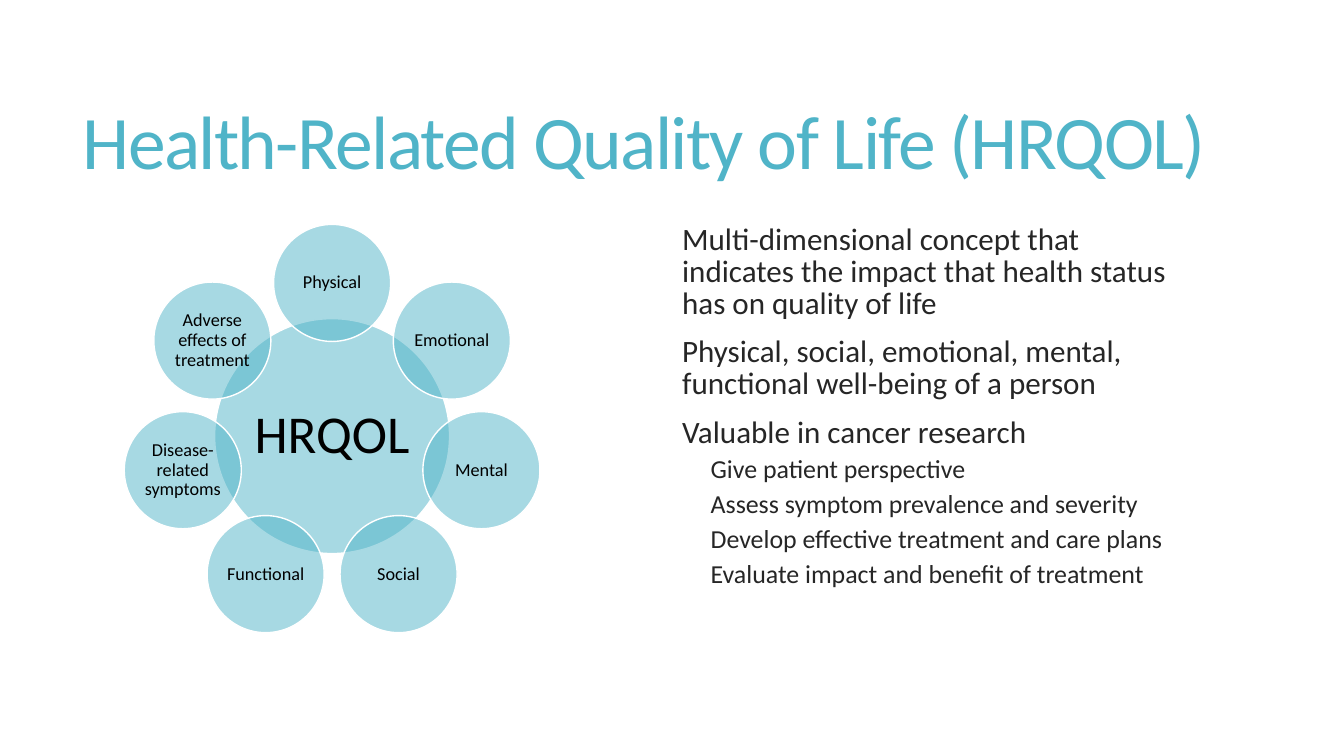
from math import cos, pi, sin

from lxml.etree import SubElement
from pptx import Presentation
from pptx.dml.color import RGBColor
from pptx.enum.shapes import MSO_SHAPE
from pptx.enum.text import MSO_ANCHOR, MSO_AUTO_SIZE, PP_ALIGN
from pptx.oxml.ns import qn
from pptx.util import Cm, Pt

COLOURS = {"teal": "50B4C8", "white": "FFFFFF", "black": "000000", "body": "262626"}
CENTRE_X, CENTRE_Y = 8.37, 10.99
RING_RADIUS = 3.86
HUB_SIZE, PETAL_SIZE = 5.92, 2.95


def format_paragraph(paragraph, size, colour, line_spacing):
    paragraph.line_spacing = line_spacing
    for run in paragraph.runs:
        run.font.name = "Calibri"
        run.font.size = Pt(size)
        run.font.color.rgb = RGBColor.from_string(COLOURS[colour])


def add_circle(shapes, label, x, y, diameter, size, inset):
    """Add a half-transparent labelled circle centred on x, y (cm)."""
    circle = shapes.add_shape(
        MSO_SHAPE.OVAL, Cm(x - diameter / 2), Cm(y - diameter / 2), Cm(diameter), Cm(diameter)
    )
    circle.shadow.inherit = False
    circle.fill.solid()
    circle.fill.fore_color.rgb = RGBColor.from_string(COLOURS["teal"])
    fill_colour = circle._element.spPr.find(qn("a:solidFill"))[0]
    SubElement(fill_colour, qn("a:alpha"), val="50000")
    circle.line.color.rgb = RGBColor.from_string(COLOURS["white"])
    circle.line.width = Pt(1)
    frame = circle.text_frame
    frame.word_wrap = True
    frame.vertical_anchor = MSO_ANCHOR.MIDDLE
    frame.margin_left = frame.margin_right = Cm(inset)
    frame.margin_top = frame.margin_bottom = Cm(inset)
    frame.text = label
    frame.paragraphs[0].alignment = PP_ALIGN.CENTER
    format_paragraph(frame.paragraphs[0], size, "black", 0.9)


presentation = Presentation()
presentation.slide_width, presentation.slide_height = Cm(33.87), Cm(19.05)
slide = presentation.slides.add_slide(presentation.slide_layouts[5])

# Title
title = slide.shapes.title
title.left, title.top, title.width, title.height = Cm(1.83), Cm(1.4), Cm(29.92), Cm(4.6)
title_frame = title.text_frame
title_frame.text = "Health-Related Quality of Life (HRQOL)"
title_frame.vertical_anchor = MSO_ANCHOR.MIDDLE
title_frame.auto_size = MSO_AUTO_SIZE.NONE
title_paragraph = title_frame.paragraphs[0]
title_paragraph.alignment = PP_ALIGN.LEFT
format_paragraph(title_paragraph, 54, "teal", 0.85)
title_paragraph.runs[0].font._element.set("spc", "-120")

# Radial diagram: hub first, then the domains clockwise from the top
domains = [
    "Physical",
    "Emotional",
    "Mental",
    "Social",
    "Functional",
    "Disease-related symptoms",
    "Adverse effects of treatment",
]
diagram = slide.shapes.add_group_shape()
add_circle(diagram.shapes, "HRQOL", CENTRE_X, CENTRE_Y, HUB_SIZE, 38, 0.13)
for index, domain in enumerate(domains):
    angle = 2 * pi * index / len(domains)
    x = CENTRE_X + RING_RADIUS * sin(angle)
    y = CENTRE_Y - RING_RADIUS * cos(angle)
    add_circle(diagram.shapes, domain, x, y, PETAL_SIZE, 13, 0.04)

# Explanation
points = [
    (0, "Multi-dimensional concept that indicates the impact that health status has on quality of life"),
    (0, "Physical, social, emotional, mental, functional well-being of a person"),
    (0, "Valuable in cancer research"),
    (1, "Give patient perspective"),
    (1, "Assess symptom prevalence and severity"),
    (1, "Develop effective treatment and care plans"),
    (1, "Evaluate impact and benefit of treatment"),
]
# Per level: font size, space before (pt), left margin (cm)
level_styles = [(22.2, 12, 0.25), (18.5, 6, 0.97)]
explanation = slide.shapes.add_textbox(Cm(16.69), Cm(5.56), Cm(12.95), Cm(10.46))
frame = explanation.text_frame
frame.word_wrap = True
for index, (level, text) in enumerate(points):
    size, space_before, margin = level_styles[level]
    paragraph = frame.add_paragraph() if index else frame.paragraphs[0]
    paragraph.text = text
    paragraph.level = level
    paragraph.space_before = Pt(space_before)
    paragraph._p.get_or_add_pPr().set("marL", str(Cm(margin)))
    paragraph._p.get_or_add_pPr().set("indent", "0")
    format_paragraph(paragraph, size, "body", 0.85)

presentation.save("out.pptx")
